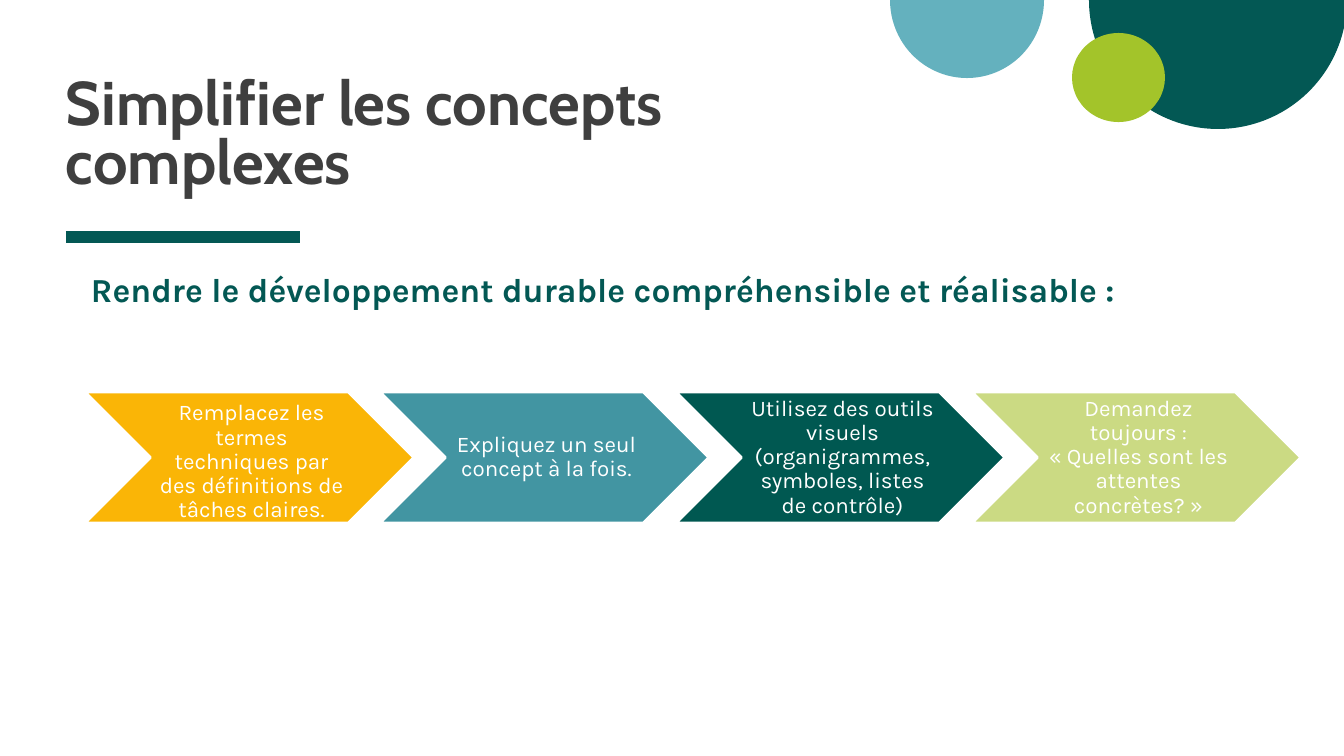
from pptx import Presentation
from pptx.dml.color import RGBColor
from pptx.enum.shapes import MSO_CONNECTOR, MSO_SHAPE as SHAPE
from pptx.enum.text import MSO_ANCHOR as ANCHOR, PP_ALIGN as ALIGN
from pptx.oxml.ns import qn
from pptx.util import Emu, Pt
from lxml import etree

TITLE = "Simplifier les concepts complexes"
SUBTITLE = "Rendre le développement durable compréhensible et réalisable :"
STEPS = [
    ("FAB506", ["Remplacez les termes techniques par des définitions de tâches claires."], 9),
    ("4295A2", ["Expliquez un seul concept à la fois."], 0),
    ("005851", ["Utilisez des outils visuels (organigrammes, symboles, listes de contrôle)"], 0),
    ("CBDA83", ["Demandez toujours :", "« Quelles sont les attentes concrètes? »"], 0),
]
GREEN, GREY, WHITE = "035854", "3F3F3F", "FFFFFF"
HALF_DISC = (0, 108)
STEP_LEFT, STEP_TOP, STEP_W, STEP_H = 85, 392, 329, 131
STEP_SPAN = 887
LABEL_INSET, LABEL_W = 65, 198


def px(n):
    return Emu(round(n * 914400 / 100.8))


def rgb(color):
    return RGBColor.from_string(color)


def add_shape(slide, kind, box, fill, adjust=(), outline=None):
    sp = slide.shapes.add_shape(kind, *map(px, box))
    sp.shadow.inherit = False
    sp.fill.solid()
    sp.fill.fore_color.rgb = rgb(fill)
    for i, value in enumerate(adjust):
        sp.adjustments[i] = value
    if outline:
        sp.line.color.rgb = rgb(outline)
        sp.line.width = Pt(2)
    else:
        sp.line.fill.background()


def add_text(slide, box, lines, size, font, color, spacing, bold=False,
             anchor=ANCHOR.TOP, align=ALIGN.LEFT, insets=(0, 0, 0, 0)):
    tf = slide.shapes.add_textbox(*map(px, box)).text_frame
    tf.word_wrap = True
    tf.vertical_anchor = anchor
    tf.margin_left, tf.margin_top, tf.margin_right, tf.margin_bottom = map(px, insets)
    for i, line in enumerate(lines):
        p = tf.add_paragraph() if i else tf.paragraphs[0]
        p.alignment, p.line_spacing = align, spacing
        r = p.add_run()
        r.text = line
        r.font.size, r.font.name, r.font.bold = Pt(size), font, bold
        r.font.color.rgb = rgb(color)


def main():
    """Build the slide on simplifying complex concepts."""
    prs = Presentation()
    prs.slide_width, prs.slide_height = px(1344), px(756)
    slide = prs.slides.add_slide(prs.slide_layouts[6])

    add_shape(slide, SHAPE.PIE, (1089, -129, 258, 258), GREEN, HALF_DISC)
    add_shape(slide, SHAPE.PIE, (890, -78, 154, 156), "64B1BE", HALF_DISC)
    add_shape(slide, SHAPE.OVAL, (1072, 33, 93, 89), "A3C42A")

    rule = slide.shapes.add_connector(MSO_CONNECTOR.STRAIGHT, *map(px, (66, 237, 300, 237)))
    rule.line.color.rgb = rgb(GREEN)
    rule.line.width = Pt(8)
    etree.SubElement(rule._element.spPr, qn("a:effectLst"))

    add_text(slide, (66, 21, 748, 175), [TITLE], 44, "Cabin", GREY, 0.8,
             bold=True, anchor=ANCHOR.BOTTOM)
    add_text(slide, (66, 252, 1129, 114), [SUBTITLE], 24, "Karla", GREEN, 0.8,
             bold=True, insets=(25, 25, 0, 0))

    for i, (fill, lines, drop) in enumerate(STEPS):
        left = STEP_LEFT + i * STEP_SPAN // (len(STEPS) - 1)
        add_shape(slide, SHAPE.CHEVRON, (left, STEP_TOP, STEP_W, STEP_H), fill, (0.5,), WHITE)
        add_text(slide, (left + LABEL_INSET, STEP_TOP + drop, LABEL_W, STEP_H - drop), lines,
                 16, "Karla", WHITE, 0.9, anchor=ANCHOR.MIDDLE, align=ALIGN.CENTER,
                 insets=(8, 3, 3, 3))

    prs.save("out.pptx")


if __name__ == "__main__":
    main()
